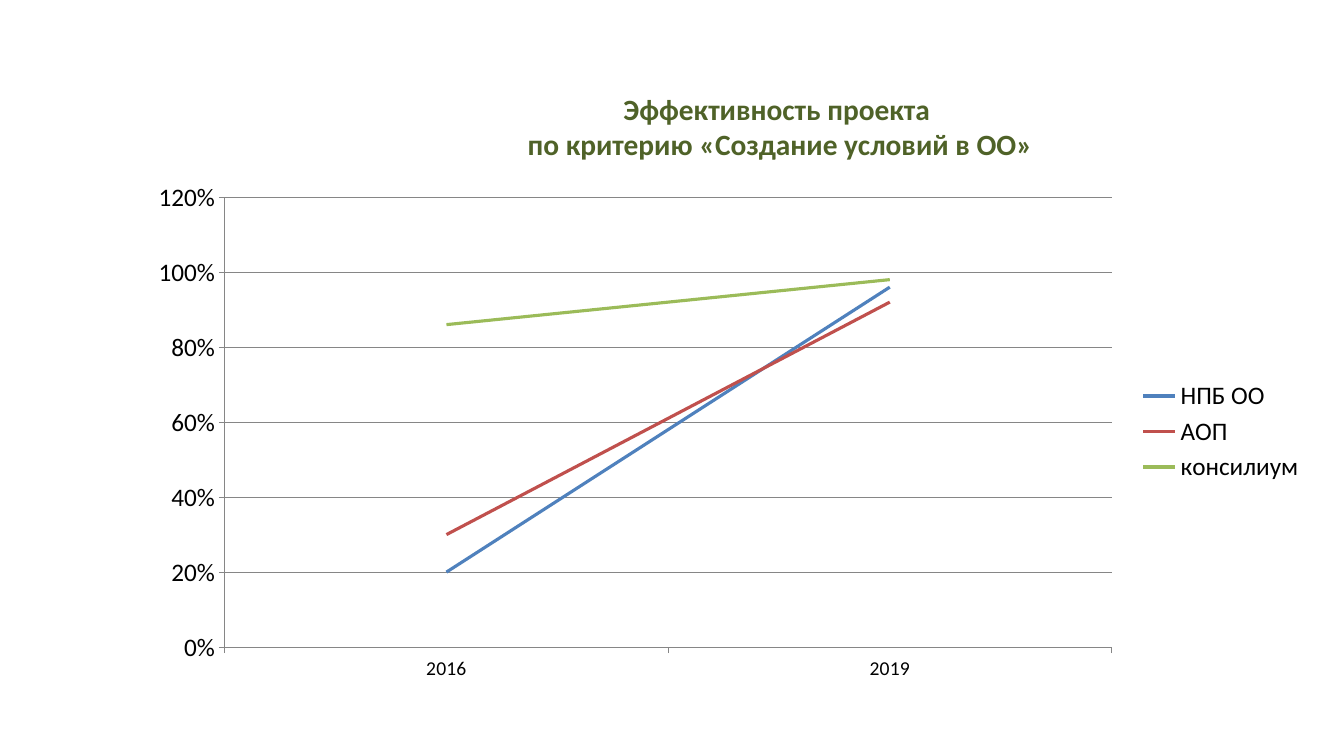
from pptx import Presentation
from pptx.chart.data import CategoryChartData
from pptx.dml.color import RGBColor
from pptx.enum.chart import XL_CHART_TYPE, XL_LEGEND_POSITION, XL_MARKER_STYLE, XL_TICK_MARK
from pptx.enum.text import MSO_AUTO_SIZE, PP_ALIGN
from pptx.util import Cm, Pt

LINE_CHART = XL_CHART_TYPE.LINE
LEGEND_RIGHT = XL_LEGEND_POSITION.RIGHT
NO_MARKER = XL_MARKER_STYLE.NONE
TICK_OUTSIDE = XL_TICK_MARK.OUTSIDE
TICK_NONE = XL_TICK_MARK.NONE
FIT_SHAPE = MSO_AUTO_SIZE.SHAPE_TO_FIT_TEXT
CENTER = PP_ALIGN.CENTER

BLACK = RGBColor(0x00, 0x00, 0x00)
GRAY = RGBColor(0x86, 0x86, 0x86)
DARK_GREEN = RGBColor(0x4F, 0x62, 0x28)
BLUE = RGBColor(0x4F, 0x81, 0xBD)
RED = RGBColor(0xC0, 0x50, 0x4D)
GREEN = RGBColor(0x9B, 0xBB, 0x59)

YEARS = ["2016", "2019"]
CRITERIA = [
    ("НПБ ОО", (0.2, 0.96), BLUE),
    ("АОП", (0.3, 0.92), RED),
    ("консилиум", (0.86, 0.98), GREEN),
]
TITLE_LINES = ["Эффективность проекта ", "по критерию «Создание условий в ОО»"]


def format_font(font, size, color=BLACK, bold=False, name="Calibri"):
    font.name = name
    font.size = Pt(size)
    font.bold = bold
    font.color.rgb = color


def write_text(para, text, align=CENTER, **style):
    para.alignment = align
    span = para.add_run()
    span.text = text
    format_font(span.font, **style)


class PageBuilder:
    """Builds text and charts on one page in a shared style."""

    def __init__(self, page, axis_color=GRAY):
        self.page = page
        self.axis_color = axis_color

    def add_text(self, lines, left, top, width, height, **style):
        box = self.page.shapes.add_textbox(Cm(left), Cm(top), Cm(width), Cm(height))
        frame = box.text_frame
        frame.word_wrap = True
        frame.auto_size = FIT_SHAPE
        frame.margin_left = frame.margin_right = Cm(0.33)
        frame.margin_top = frame.margin_bottom = Cm(0.17)
        for index, line in enumerate(lines):
            para = frame.add_paragraph() if index else frame.paragraphs[0]
            write_text(para, line, **style)

    def style_line(self, line, color, width):
        line.color.rgb = color
        line.width = Pt(width)

    def style_axis(self, axis, size):
        axis.major_tick_mark = TICK_OUTSIDE
        axis.minor_tick_mark = TICK_NONE
        self.style_line(axis.format.line, self.axis_color, 0.75)
        format_font(axis.tick_labels.font, size)

    def add_line_chart(self, categories, rows, left, top, width, height):
        data = CategoryChartData(number_format="0%")
        data.categories = categories
        for name, values, _ in rows:
            data.add_series(name, values)
        chart = self.page.shapes.add_chart(
            LINE_CHART, Cm(left), Cm(top), Cm(width), Cm(height), data
        ).chart
        format_font(chart.font, 18)
        chart.has_title = False
        chart.has_legend = True
        chart.legend.position = LEGEND_RIGHT
        chart.legend.include_in_layout = False
        format_font(chart.legend.font, 18)

        self.style_axis(chart.category_axis, 14)
        value_axis = chart.value_axis
        self.style_axis(value_axis, 18)
        value_axis.minimum_scale = 0
        value_axis.maximum_scale = 1.2
        value_axis.major_unit = 0.2
        value_axis.has_major_gridlines = True
        self.style_line(value_axis.major_gridlines.format.line, self.axis_color, 0.75)
        value_axis.tick_labels.number_format = "0%"
        value_axis.tick_labels.number_format_is_linked = False

        plot = chart.plots[0]
        plot.vary_by_categories = False
        for series, (_, _, color) in zip(plot.series, rows):
            series.smooth = False
            series.marker.style = NO_MARKER
            self.style_line(series.format.line, color, 2.25)


def main():
    deck = Presentation()
    deck.slide_width = Cm(33.87)
    deck.slide_height = Cm(19.05)
    builder = PageBuilder(deck.slides.add_slide(deck.slide_layouts[6]))
    builder.add_line_chart(YEARS, CRITERIA, 3.4, 4.32, 29.74, 13.11)
    builder.add_text(TITLE_LINES, 5.87, 2.13, 27.58, 2.16,
                     size=21, color=DARK_GREEN, bold=True)
    deck.save("out.pptx")


if __name__ == "__main__":
    main()
